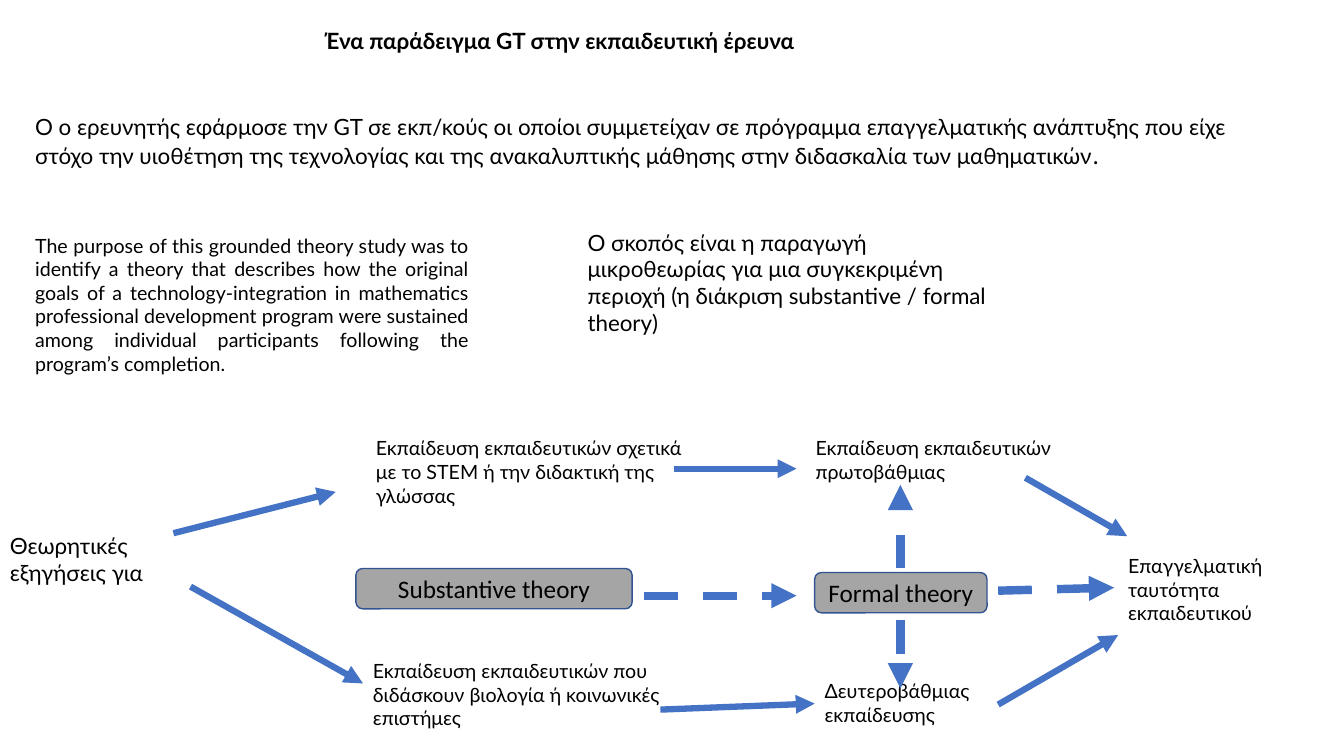
import pptx
import pptx.dml.color
import pptx.enum.dml
import pptx.enum.shapes
import pptx.enum.text
import pptx.oxml
import pptx.oxml.ns
import pptx.util

Inches = pptx.util.Inches
Pt = pptx.util.Pt
RGBColor = pptx.dml.color.RGBColor
ALIGN = pptx.enum.text.PP_ALIGN
ANCHOR = pptx.enum.text.MSO_ANCHOR

BLACK = RGBColor(0x00, 0x00, 0x00)
BLUE = RGBColor(0x44, 0x72, 0xC4)
DARK_BLUE = RGBColor(0x32, 0x54, 0x91)
GREY = RGBColor(0xA5, 0xA5, 0xA5)

TITLE = {"name": "Lato", "size": Pt(16), "bold": True}
LARGE = {"name": "Lato", "size": Pt(16)}
SMALL = {"name": "Lato", "size": Pt(14)}
THEORY = {"name": "Calibri", "size": Pt(18)}

INTRODUCTION = (
    "O ο ερευνητής εφάρμοσε την GT σε εκπ/κούς οι οποίοι συμμετείχαν σε πρόγραμμα "
    "επαγγελματικής ανάπτυξης που είχε στόχο την υιοθέτηση της τεχνολογίας και της "
    "ανακαλυπτικής μάθησης στην διδασκαλία των μαθηματικών"
)
PURPOSE = (
    "The purpose of this grounded theory study was to identify a theory that describes "
    "how the original goals of a technology-integration in mathematics professional "
    "development program were sustained among individual participants following the "
    "program’s completion."
)
AIM = (
    "Ο σκοπός είναι η παραγωγή μικροθεωρίας για μια συγκεκριμένη περιοχή "
    "(η διάκριση substantive / formal theory)"
)

# Places in the diagram are measured from its top left corner.
DIAGRAM_LEFT, DIAGRAM_TOP = 0, 4.28
LABELS = [
    ("Θεωρητικές εξηγήσεις για", LARGE, (0, 0.95, 2.09, 0.64)),
    ("Εκπαίδευση εκπαιδευτικών πρωτοβάθμιας", SMALL, (7.99, 0, 3.09, 0.57)),
    ("Δευτεροβάθμιας εκπαίδευσης", SMALL, (8.08, 2.41, 2.09, 0.57)),
    ("Εκπαίδευση εκπαιδευτικών σχετικά με το STEM ή την διδακτική της γλώσσας",
     SMALL, (3.63, 0, 3.35, 0.81)),
    ("Εκπαίδευση εκπαιδευτικών που διδάσκουν βιολογία ή κοινωνικές επιστήμες",
     SMALL, (3.6, 2.21, 3.35, 0.81)),
    ("Επαγγελματική ταυτότητα εκπαιδευτικού", SMALL, (11.09, 1.17, 2.09, 0.81)),
]
THEORIES = [
    ("Substantive theory", (3.53, 1.36, 2.74, 0.4)),
    ("Formal theory", (8.08, 1.4, 1.71, 0.4)),
]
SOLID_ARROWS = [
    (1.72, 1.01, 3.33, 0.6),
    (1.89, 1.54, 3.6, 2.5),
    (6.68, 0.37, 7.9, 0.37),
    (6.55, 2.76, 8.08, 2.7),
    (9.9, 2.71, 11.09, 2.02),
    (10.17, 0.46, 11.18, 1.04),
]
DASHED_ARROWS = [
    (6.39, 1.63, 7.9, 1.63),
    (9.9, 1.58, 11.05, 1.55),
    (8.93, 1.36, 8.93, 0.53),
    (8.93, 1.87, 8.93, 2.55),
]


def set_attributes(target, values):
    for name, value in values.items():
        setattr(target, name, value)


def write_text(shape, spans, align=ALIGN.LEFT, anchor=ANCHOR.TOP):
    """Fill a shape with one paragraph made of (text, font format) spans."""
    frame = shape.text_frame
    set_attributes(frame, {
        "word_wrap": True,
        "auto_size": pptx.enum.text.MSO_AUTO_SIZE.NONE,
        "vertical_anchor": anchor,
    })
    para = frame.paragraphs[0]
    set_attributes(para, {"alignment": align, "line_spacing": 1.0, "space_before": Pt(0)})
    for text, font_format in spans:
        span = para.add_run()
        span.text = text
        set_attributes(span.font, font_format)
        span.font.color.rgb = BLACK


def add_text(page, spans, box, align=ALIGN.LEFT):
    text_box = page.shapes.add_textbox(*map(Inches, box))
    write_text(text_box, spans, align)


def add_title(page, box):
    title = page.shapes.title
    names = ("left", "top", "width", "height")
    set_attributes(title, dict(zip(names, map(Inches, box))))
    write_text(title, [("Ένα παράδειγμα GT στην εκπαιδευτική έρευνα", TITLE)])


def add_theory(page, text, box):
    theory = page.shapes.add_shape(
        pptx.enum.shapes.MSO_SHAPE.ROUNDED_RECTANGLE, *map(Inches, box))
    theory.shadow.inherit = False
    theory.fill.solid()
    theory.fill.fore_color.rgb = GREY
    theory.line.color.rgb = DARK_BLUE
    theory.line.width = Pt(1)
    write_text(theory, [(text, THEORY)], ALIGN.CENTER, ANCHOR.MIDDLE)


def add_arrow(page, ends, width, dash=None):
    arrow = page.shapes.add_connector(
        pptx.enum.shapes.MSO_CONNECTOR.STRAIGHT, *map(Inches, ends))
    arrow.line.color.rgb = BLUE
    arrow.line.width = width
    if dash is not None:
        arrow.line.dash_style = dash
    head = pptx.oxml.parse_xml(
        f'<a:tailEnd {pptx.oxml.ns.nsdecls("a")} type="triangle"/>')
    arrow.line._get_or_add_ln().append(head)
    no_effects = pptx.oxml.parse_xml(f'<a:effectLst {pptx.oxml.ns.nsdecls("a")}/>')
    arrow._element.spPr.append(no_effects)


def add_diagram(page, left, top):
    def placed(box):
        return (left + box[0], top + box[1], *box[2:])

    def placed_ends(ends):
        return tuple(value + shift for value, shift in zip(ends, (left, top) * 2))

    for text, font_format, box in LABELS:
        add_text(page, [(text, font_format)], placed(box))
    for text, box in THEORIES:
        add_theory(page, text, placed(box))
    for ends in SOLID_ARROWS:
        add_arrow(page, placed_ends(ends), Pt(4.5))
    for ends in DASHED_ARROWS:
        # SQUARE_DOT is the name of the sysDot preset; ROUND_DOT would be dotted too.
        add_arrow(page, placed_ends(ends), Pt(6), pptx.enum.dml.MSO_LINE.DASH)


def main():
    deck = pptx.Presentation()
    deck.slide_width = Inches(13.33)
    deck.slide_height = Inches(7.5)
    page = deck.slides.add_slide(deck.slide_layouts.get_by_name("Title Only"))
    add_title(page, (3.12, 0.22, 6.32, 0.37))
    add_text(page, [(INTRODUCTION, LARGE), (".", THEORY)], (0.25, 1.07, 12.46, 0.94))
    add_text(page, [(PURPOSE, SMALL)], (0.25, 2.27, 4.5, 1.75), ALIGN.JUSTIFY)
    add_text(page, [(AIM, LARGE)], (5.73, 2.22, 4.33, 1.18))
    add_diagram(page, DIAGRAM_LEFT, DIAGRAM_TOP)
    deck.save("out.pptx")


if __name__ == "__main__":
    main()
